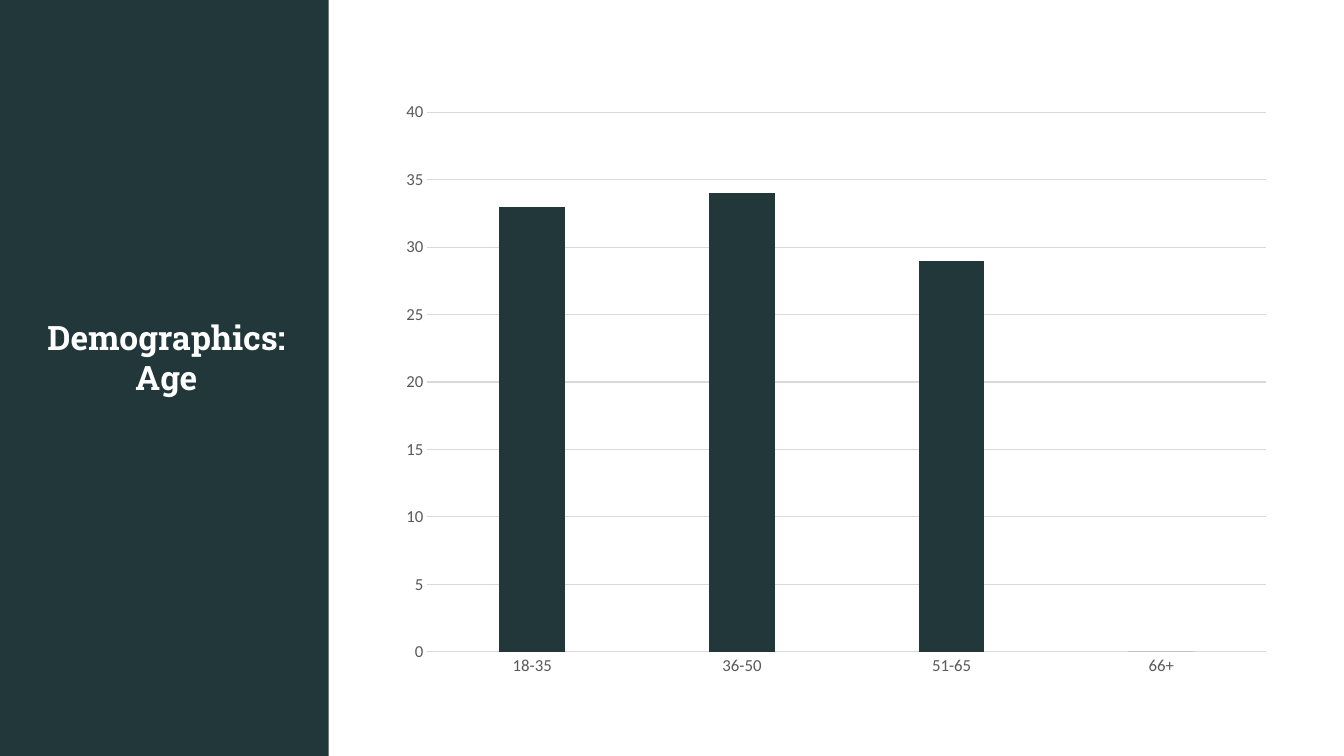
import pptx
import pptx.chart.data
import pptx.dml.color
import pptx.enum.chart
import pptx.enum.text
import pptx.util
from dataclasses import dataclass

PX = 9525  # EMU in one px, 96 px to the inch


@dataclass(frozen=True)
class Theme:
    dark: str = "213739"
    white: str = "FFFFFF"
    grid: str = "D9D9D9"
    label: str = "595959"
    head_font: str = "Roboto Slab"
    body_font: str = "Calibri"
    head_size: int = 24
    label_size: int = 12
    rule: float = 0.75


THEME = Theme()
AGES = {"18-35": 33, "36-50": 34, "51-65": 29, "66+": 0}


def px(*nums):
    return [pptx.util.Emu(num * PX) for num in nums]


def paint(fill, color):
    fill.solid()
    fill.fore_color.rgb = pptx.dml.color.RGBColor.from_string(color)


def style(font, name, size, color, bold=False):
    font.name = name
    font.size = pptx.util.Pt(size)
    font.bold = bold
    paint(font.fill, color)


def rule(line, color):
    line.width = pptx.util.Pt(THEME.rule)
    paint(line.fill, color)


def write(shape, text, align=pptx.enum.text.PP_ALIGN.CENTER, **look):
    frame = shape.text_frame
    frame.word_wrap = True
    frame.auto_size = pptx.enum.text.MSO_AUTO_SIZE.SHAPE_TO_FIT_TEXT
    frame.vertical_anchor = pptx.enum.text.MSO_ANCHOR.TOP
    frame.text = text
    para = frame.paragraphs[0]
    para.alignment = align
    style(para.runs[0].font, **look)


def add_panel(slide, box, color):
    kind = pptx.enum.shapes.MSO_SHAPE.RECTANGLE
    panel = slide.shapes.add_shape(kind, *px(*box))
    panel.shadow.inherit = False
    paint(panel.fill, color)
    panel.line.fill.background()


def set_title(slide, box, text):
    title = slide.shapes.title
    title.left, title.top, title.width, title.height = px(*box)
    write(title, text, name=THEME.head_font, size=THEME.head_size,
          color=THEME.white, bold=True)


def style_axis(axis):
    axis.major_tick_mark = pptx.enum.chart.XL_TICK_MARK.NONE
    axis.minor_tick_mark = pptx.enum.chart.XL_TICK_MARK.NONE
    style(axis.tick_labels.font, THEME.body_font, THEME.label_size,
          THEME.label)


def add_bars(slide, box, data):
    source = pptx.chart.data.CategoryChartData()
    source.categories = list(data)
    source.add_series("Series 1", list(data.values()))
    kind = pptx.enum.chart.XL_CHART_TYPE.COLUMN_CLUSTERED
    chart = slide.shapes.add_chart(kind, *px(*box), source).chart
    chart.has_legend = False
    chart.has_title = False

    # Columns
    plot = chart.plots[0]
    plot.gap_width = 219
    plot.overlap = -27
    plot.vary_by_categories = False
    paint(plot.series[0].format.fill, THEME.dark)

    # Axes and grid
    style_axis(chart.category_axis)
    rule(chart.category_axis.format.line, THEME.grid)
    axis = chart.value_axis
    style_axis(axis)
    axis.minimum_scale, axis.maximum_scale, axis.major_unit = 0, 40, 5
    axis.format.line.fill.background()
    rule(axis.major_gridlines.format.line, THEME.grid)


def main():
    deck = pptx.Presentation()
    deck.slide_width, deck.slide_height = px(1280, 720)
    slide = deck.slides.add_slide(deck.slide_layouts[5])
    paint(slide.background.fill, THEME.dark)

    add_panel(slide, (313, -11, 968, 741), THEME.white)
    set_title(slide, (25, 297, 267, 87), "Demographics: Age")
    add_bars(slide, (370, 86, 853, 569), AGES)
    deck.save("out.pptx")


if __name__ == "__main__":
    main()
